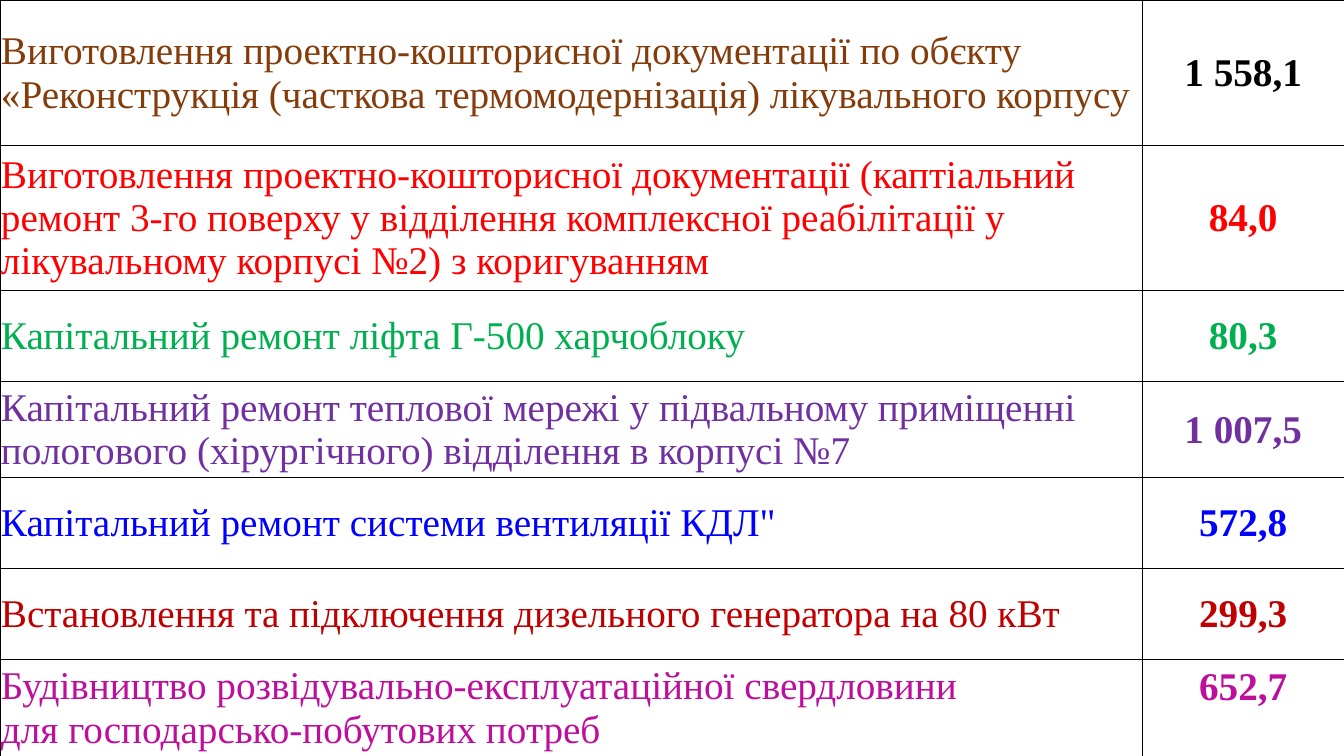
"""Build a slide with a table of capital works and their costs."""
import pptx
import pptx.dml.color
import pptx.enum.text
import pptx.oxml
import pptx.oxml.ns
import pptx.util

RGBColor = pptx.dml.color.RGBColor
Inches = pptx.util.Inches
Align = pptx.enum.text.PP_ALIGN
Anchor = pptx.enum.text.MSO_ANCHOR

BLACK = RGBColor(0x00, 0x00, 0x00)
WHITE = RGBColor(0xFF, 0xFF, 0xFF)
BROWN = RGBColor(0x84, 0x3C, 0x0B)
RED = RGBColor(0xFF, 0x00, 0x00)
GREEN = RGBColor(0x00, 0xB0, 0x50)
PURPLE = RGBColor(0x70, 0x30, 0xA0)
BLUE = RGBColor(0x00, 0x00, 0xFF)
DARK_RED = RGBColor(0xC0, 0x00, 0x00)
MAGENTA = RGBColor(0xBD, 0x0F, 0x9C)

COLUMN_WIDTHS = (11.33, 2)
WORKS = (
    (1.44, "Виготовлення проектно-кошторисної документації по обєкту "
           "«Реконструкція (часткова термомодернізація) лікувального корпусу",
     "1 558,1", BROWN, BLACK),
    (1.44, "Виготовлення проектно-кошторисної документації (каптіальний ремонт "
           "3-го поверху у відділення комплексної реабілітації у лікувальному "
           "корпусі №2) з коригуванням", "84,0", RED, RED),
    (0.9, "Капітальний ремонт ліфта Г-500 харчоблоку", "80,3", GREEN, GREEN),
    (0.96, "Капітальний ремонт теплової мережі у підвальному приміщенні\n"
           "пологового (хірургічного) відділення в корпусі №7",
     "1 007,5", PURPLE, PURPLE),
    (0.9, 'Капітальний ремонт системи вентиляції КДЛ"', "572,8", BLUE, BLUE),
    (0.9, "Встановлення та підключення дизельного генератора на 80 кВт",
     "299,3", DARK_RED, DARK_RED),
    (0.96, "Будівництво розвідувально-експлуатаційної свердловини\n"
           "для господарсько-побутових потреб", "652,7", MAGENTA, MAGENTA),
)


def write_text(para, text, *, font, size, color, bold=False, align=Align.LEFT):
    para.alignment = align
    for index, line in enumerate(text.split("\n")):
        if index:
            para.add_line_break()
        span = para.add_run()
        span.text = line
        span.font.name = font
        span.font.size = pptx.util.Pt(size)
        span.font.bold = bold
        span.font.color.rgb = color


class SlideBuilder:
    font = "Times New Roman"
    size = 28

    def __init__(self, page):
        self.page = page

    def add_borders(self, cell, widths):
        properties = cell._tc.get_or_add_tcPr()
        for index, (side, width) in enumerate(zip("LRTB", widths)):
            border = pptx.oxml.parse_xml(
                f'<a:ln{side} {pptx.oxml.ns.nsdecls("a")} w="{pptx.util.Pt(width)}">'
                f'<a:solidFill><a:srgbClr val="{BLACK}"/></a:solidFill></a:ln{side}>')
            properties.insert(index, border)

    def fill_cell(self, cell, text, borders, anchor=Anchor.MIDDLE, top=0.01, **style):
        cell.margin_left = cell.margin_right = Inches(0.01)
        cell.margin_top = Inches(top)
        cell.margin_bottom = 0
        cell.vertical_anchor = anchor
        cell.fill.solid()
        cell.fill.fore_color.rgb = WHITE
        self.add_borders(cell, borders)
        write_text(cell.text_frame.paragraphs[0], text,
                   font=self.font, size=self.size, **style)

    def add_cost_table(self, works):
        height = sum(work[0] for work in works)
        table = self.page.shapes.add_table(
            len(works), len(COLUMN_WIDTHS), 0, 0,
            Inches(sum(COLUMN_WIDTHS)), Inches(height)).table
        for column, width in zip(table.columns, COLUMN_WIDTHS):
            column.width = Inches(width)
        for index, (height, title, cost, title_color, cost_color) in enumerate(works):
            table.rows[index].height = Inches(height)
            self.fill_cell(table.cell(index, 0), title, (0.5, 1, 0.5, 0.5),
                           color=title_color)
            last = index == len(works) - 1
            self.fill_cell(table.cell(index, 1), cost, (1, 0.5, 0.5, 0.5),
                           anchor=Anchor.TOP if last else Anchor.MIDDLE,
                           top=0.06 if last else 0.01,
                           color=cost_color, bold=True, align=Align.CENTER)


def main():
    deck = pptx.Presentation()
    deck.slide_width = Inches(13.33)
    deck.slide_height = Inches(7.5)
    page = deck.slides.add_slide(deck.slide_layouts[6])
    SlideBuilder(page).add_cost_table(WORKS)
    deck.save("out.pptx")


if __name__ == "__main__":
    main()
